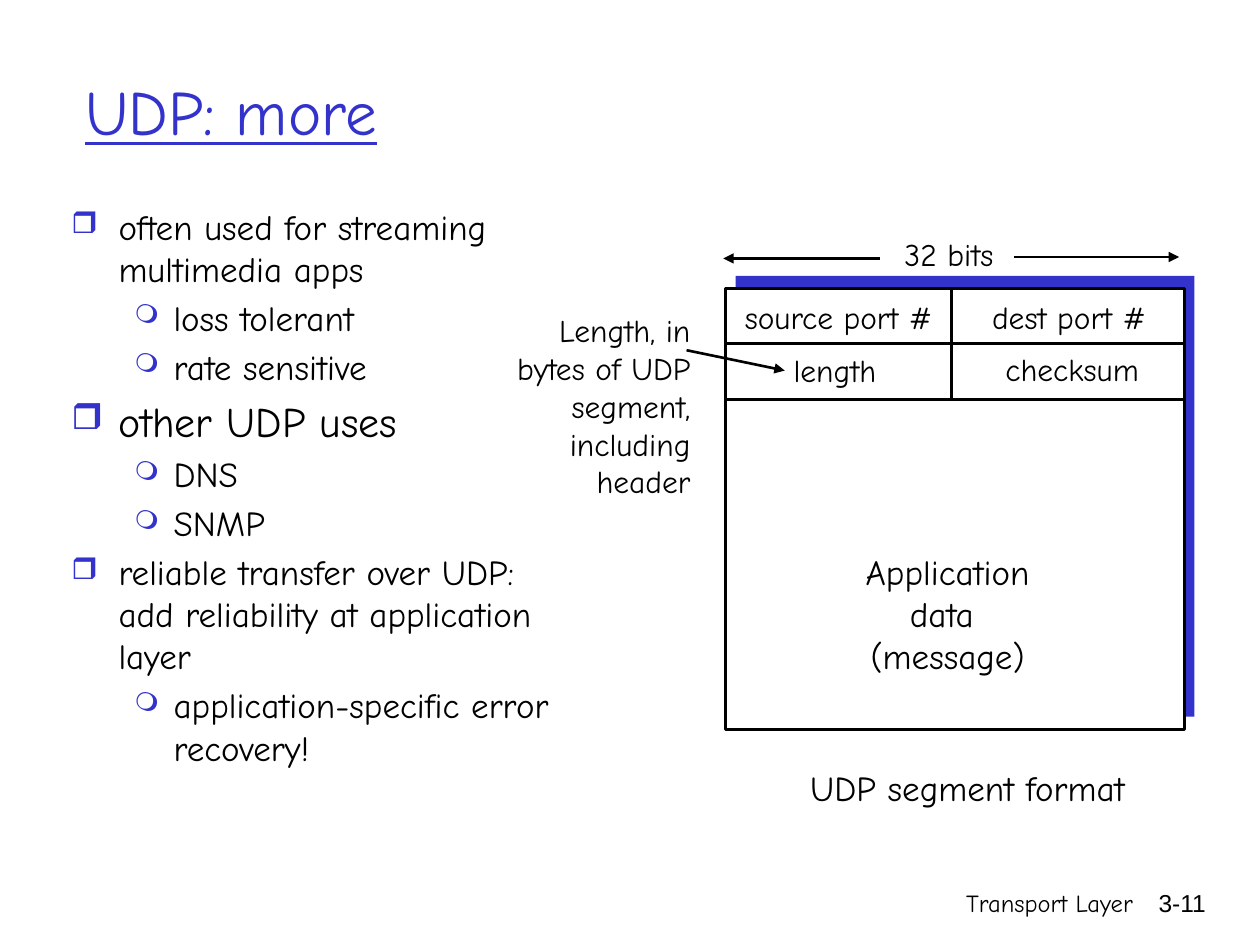
import pptx
import pptx.util
import pptx.dml.color
import pptx.enum.shapes
import pptx.enum.text
from lxml import etree
from pptx.oxml.ns import qn

Cm = pptx.util.Cm
Pt = pptx.util.Pt
Align = pptx.enum.text.PP_ALIGN
Anchor = pptx.enum.text.MSO_ANCHOR
BLUE = pptx.dml.color.RGBColor(0x33, 0x33, 0xCC)
BLACK = pptx.dml.color.RGBColor(0, 0, 0)
WHITE = pptx.dml.color.RGBColor(255, 255, 255)
FONT = "Comic Neue"
LEVELS = [
    {"bullet": "\u2752", "scale": 85, "margin": 0.95, "hang": 0.95},
    {"bullet": "\u274d", "scale": 75, "margin": 2.06, "hang": 0.79},
]
USES = [
    (0, "often used for streaming multimedia apps", 20),
    (1, "loss tolerant", 20),
    (1, "rate sensitive", 20),
    (0, "other UDP uses", 24),
    (1, "DNS", 20),
    (1, "SNMP", 20),
    (0, "reliable transfer over UDP: add reliability at application layer", 20),
    (1, "application-specific error recovery!", 20),
]
SEGMENT_LEFT, SEGMENT_TOP = 14.63, 5.82
SEGMENT_WIDTH, SEGMENT_HEIGHT = 9.25, 8.89
ROW_BOTTOMS = (6.93, 8.05)
COLUMN_SPLIT = 19.18


def write(paragraph, text, size=18, font=FONT, color=BLACK, align=Align.LEFT,
          underline=None):
    paragraph.alignment = align
    run = paragraph.add_run()
    run.text = text
    run.font.size = Pt(size)
    run.font.name = font
    run.font.color.rgb = color
    run.font.underline = underline


def add_frame(slide, box, wrap=True, anchor=Anchor.TOP):
    frame = slide.shapes.add_textbox(*map(Cm, box)).text_frame
    frame.word_wrap = wrap
    frame.vertical_anchor = anchor
    return frame


def add_label(slide, box, *lines, wrap=False, anchor=Anchor.TOP, **look):
    frame = add_frame(slide, box, wrap, anchor)
    for index, line in enumerate(lines):
        paragraph = frame.add_paragraph() if index else frame.paragraphs[0]
        write(paragraph, line, **look)


def set_bullet(paragraph, bullet, scale, margin, hang):
    properties = paragraph._p.get_or_add_pPr()
    properties.set("marL", str(Cm(margin)))
    properties.set("indent", str(-Cm(hang)))
    color = etree.SubElement(properties, qn("a:buClr"))
    etree.SubElement(color, qn("a:srgbClr"), val=str(BLUE))
    etree.SubElement(properties, qn("a:buSzPct"), val=str(scale * 1000))
    etree.SubElement(properties, qn("a:buChar"), char=bullet)


def add_outline(slide, box, items):
    frame = add_frame(slide, box)
    for index, (level, text, size) in enumerate(items):
        paragraph = frame.add_paragraph() if index else frame.paragraphs[0]
        paragraph.level = level
        paragraph.space_before = Pt(size * 0.2)
        write(paragraph, text, size=size)
        set_bullet(paragraph, **LEVELS[level])


def add_block(slide, left, top, fill, line=None):
    block = slide.shapes.add_shape(
        pptx.enum.shapes.MSO_SHAPE.RECTANGLE,
        *map(Cm, (left, top, SEGMENT_WIDTH, SEGMENT_HEIGHT)))
    block.shadow.inherit = False
    block.fill.solid()
    block.fill.fore_color.rgb = fill
    if line is None:
        block.line.fill.background()
    else:
        block.line.color.rgb = line
        block.line.width = Pt(1.5)


def add_line(slide, start, end, arrow=False):
    line = slide.shapes.add_connector(
        pptx.enum.shapes.MSO_CONNECTOR.STRAIGHT, *map(Cm, start + end))
    line.line.color.rgb = BLACK
    line.line.width = Pt(1.5)
    if arrow:
        etree.SubElement(line.line._get_or_add_ln(), qn("a:tailEnd"), type="triangle")
    etree.SubElement(line._element.spPr, qn("a:effectLst"))


def add_segment(slide):
    add_block(slide, SEGMENT_LEFT + 0.2, SEGMENT_TOP - 0.26, BLUE)
    add_block(slide, SEGMENT_LEFT, SEGMENT_TOP, WHITE, BLACK)
    row_top = SEGMENT_TOP
    for row_bottom in ROW_BOTTOMS:
        add_line(slide, (SEGMENT_LEFT, row_bottom),
                 (SEGMENT_LEFT + SEGMENT_WIDTH, row_bottom))
        add_line(slide, (COLUMN_SPLIT, row_top), (COLUMN_SPLIT, row_bottom))
        row_top = row_bottom
    for text, box in [
        ("source port #", (14.58, 5.89, 4.65, 1.02)),
        ("dest port #", (19.53, 5.89, 4.04, 1.02)),
        ("length", (15.65, 6.96, 2.36, 1.02)),
        ("checksum", (19.94, 6.93, 3.35, 1.02)),
        ("32 bits", (17.81, 4.62, 2.64, 1.02)),
    ]:
        add_label(slide, box, text, align=Align.CENTER)
    add_label(slide, (17.02, 10.97, 4.17, 2.79), "Application", "data ",
              "(message)", size=20, align=Align.CENTER)
    add_label(slide, (15.82, 15.32, 7.37, 1.09), "UDP segment format",
              size=20, align=Align.CENTER)
    add_label(slide, (9.7, 6.15, 4.47, 4.06), "Length, in", "bytes of UDP",
              "segment,", "including", "header", align=Align.RIGHT)
    for start, end in [
        ((20.45, 5.18), (23.77, 5.18)),
        ((17.73, 5.21), (14.58, 5.21)),
        ((13.84, 7.06), (15.82, 7.47)),
    ]:
        add_line(slide, start, end, arrow=True)


def main():
    deck = pptx.Presentation()
    deck.slide_width, deck.slide_height = Cm(25.4), Cm(19.05)
    slide = deck.slides.add_slide(deck.slide_layouts[6])
    add_label(slide, (15.04, 17.78, 8.05, 1.27), "Transport Layer",
              wrap=True, size=14, align=Align.RIGHT)
    add_label(slide, (22.68, 17.78, 1.88, 1.27), "3-11",
              wrap=True, size=14, font="Arial", align=Align.RIGHT)
    add_label(slide, (1.47, 0.64, 23.16, 3.18), "UDP: more", wrap=True,
              anchor=Anchor.MIDDLE, size=36, color=BLUE, underline=True)
    add_outline(slide, (1.19, 4.01, 10.59, 12.9), USES)
    add_segment(slide)
    deck.save("out.pptx")


main()
